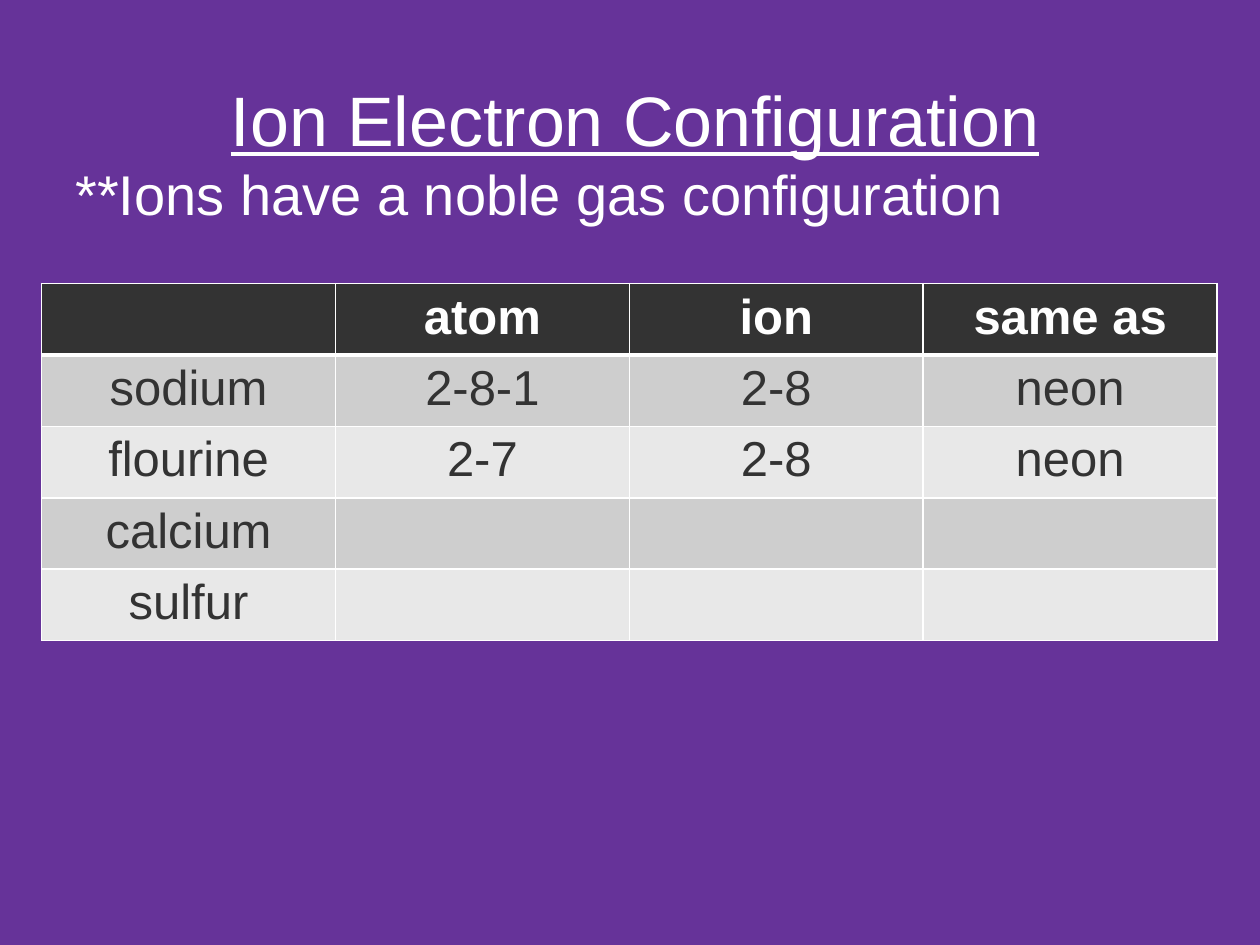
from dataclasses import dataclass

from lxml import etree
from pptx import Presentation
from pptx.dml.color import RGBColor
from pptx.enum import text
from pptx.oxml.ns import qn
from pptx.util import Inches, Pt

PURPLE = RGBColor(0x66, 0x33, 0x99)
WHITE = RGBColor(0xFF, 0xFF, 0xFF)
CHARCOAL = RGBColor(0x33, 0x33, 0x33)
BANDS = (RGBColor(0xCE, 0xCE, 0xCE), RGBColor(0xE8, 0xE8, 0xE8))

WIDTH, HEIGHT = Inches(10), Inches(7.5)
CENTER, LEFT = text.PP_ALIGN.CENTER, text.PP_ALIGN.LEFT

CONFIGURATIONS = (
    ("", "atom", "ion", "same as"),
    ("sodium", "2-8-1", "2-8", "neon"),
    ("flourine", "2-7", "2-8", "neon"),
    ("calcium", "", "", ""),
    ("sulfur", "", "", ""),
)


@dataclass(frozen=True)
class Area:
    """A rectangle in shares of the slide's width and height."""
    left: float
    top: float
    width: float
    height: float

    def lengths(self) -> tuple[int, int, int, int]:
        return (int(self.left * WIDTH), int(self.top * HEIGHT),
                int(self.width * WIDTH), int(self.height * HEIGHT))


@dataclass(frozen=True)
class RowStyle:
    fill: RGBColor
    color: RGBColor
    bold: bool
    top_line: float
    bottom_line: float


HEADING_AREA = Area(0.05, 0.074, 0.908, 0.09)
RULE_AREA = Area(0.05, 0.162, 0.908, 0.08)
TABLE_AREA = Area(0.033, 0.3, 0.933, 0.378)


def write(frame, words: str, *, size: float, color: RGBColor = WHITE,
          align=CENTER, bold: bool = False, underline: bool = False) -> None:
    paragraph = frame.paragraphs[0]
    paragraph.alignment = align
    font = paragraph.font
    if words:
        run = paragraph.add_run()
        run.text = words
        font = run.font
    font.name, font.size, font.bold = "Arial", Pt(size), bold
    font.underline = underline
    font.color.rgb = color


def set_up_frame(frame) -> None:
    frame.word_wrap = True
    frame.auto_size = text.MSO_AUTO_SIZE.NONE
    frame.vertical_anchor = text.MSO_ANCHOR.TOP


def border_cell(cell, style: RowStyle) -> None:
    properties = cell._tc.get_or_add_tcPr()
    widths = {"a:lnL": 1, "a:lnR": 1,
              "a:lnT": style.top_line, "a:lnB": style.bottom_line}
    # Borders come before the fill in a cell's properties
    for position, (tag, width) in enumerate(widths.items()):
        line = etree.Element(qn(tag), w=str(Pt(width)))
        solid = etree.SubElement(line, qn("a:solidFill"))
        etree.SubElement(solid, qn("a:srgbClr"), val=str(WHITE))
        properties.insert(position, line)


def row_style(row: int) -> RowStyle:
    if row == 0:
        return RowStyle(CHARCOAL, WHITE, True, 1, 3)
    return RowStyle(BANDS[(row - 1) % 2], CHARCOAL, False, 3 if row == 1 else 1, 1)


def draw_table(slide, rows: tuple, area: Area) -> None:
    table = slide.shapes.add_table(len(rows), len(rows[0]), *area.lengths()).table
    for row, entries in enumerate(rows):
        style = row_style(row)
        for column, entry in enumerate(entries):
            cell = table.cell(row, column)
            cell.fill.solid()
            cell.fill.fore_color.rgb = style.fill
            border_cell(cell, style)
            write(cell.text_frame, entry, size=28, color=style.color, bold=style.bold)


def main() -> None:
    deck = Presentation()
    deck.slide_width, deck.slide_height = WIDTH, HEIGHT
    slide = deck.slides.add_slide(deck.slide_layouts[5])
    slide.background.fill.solid()
    slide.background.fill.fore_color.rgb = PURPLE

    # Heading
    heading = slide.shapes.title
    heading.left, heading.top, heading.width, heading.height = HEADING_AREA.lengths()
    set_up_frame(heading.text_frame)
    write(heading.text_frame, "Ion Electron Configuration", size=40, underline=True)

    # Rule about ions
    rule = slide.shapes.add_textbox(*RULE_AREA.lengths())
    set_up_frame(rule.text_frame)
    write(rule.text_frame, "**Ions have a noble gas configuration", size=32, align=LEFT)

    # Electron configurations
    draw_table(slide, CONFIGURATIONS, TABLE_AREA)

    deck.save("out.pptx")


if __name__ == "__main__":
    main()
